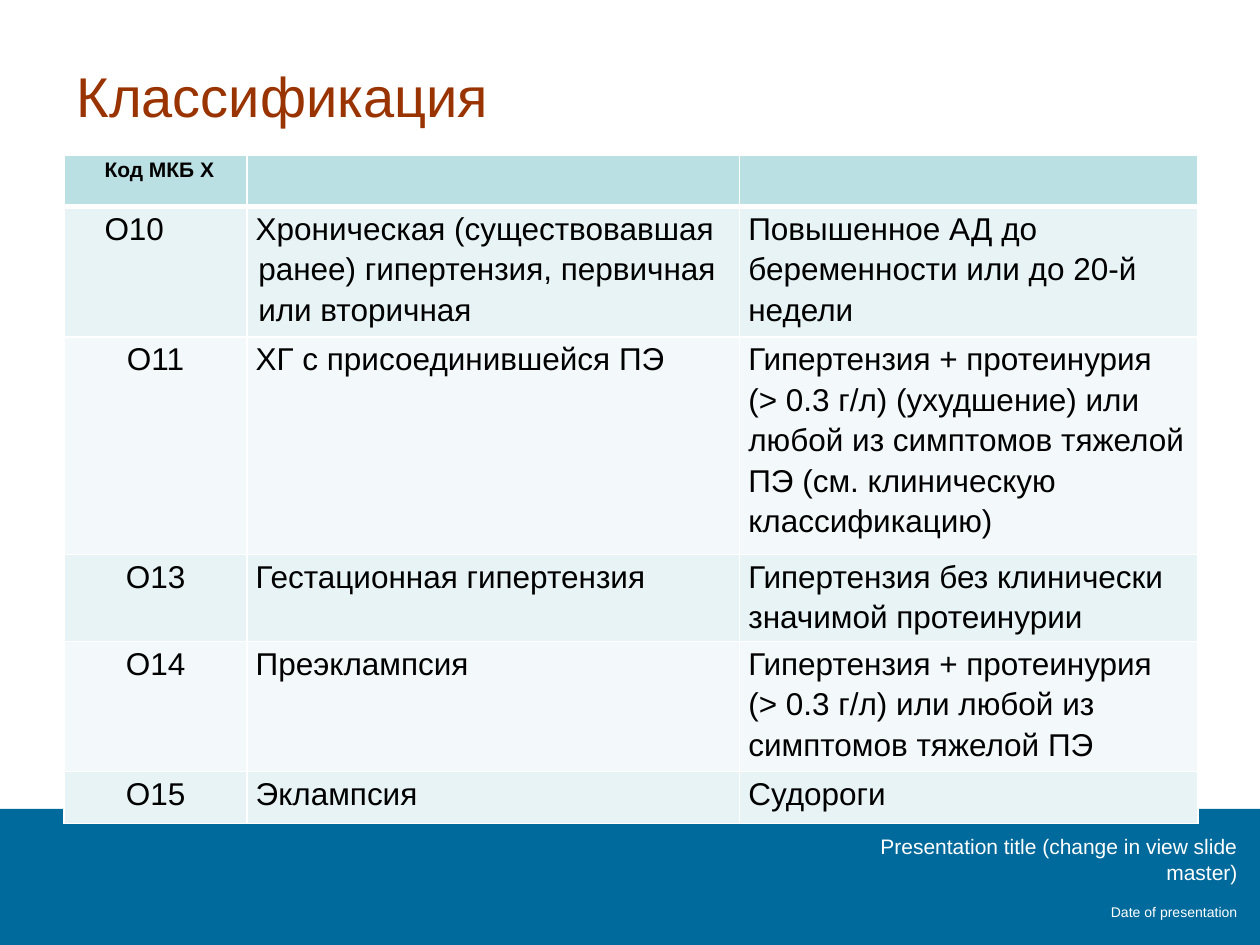
import pptx
import pptx.util
import pptx.dml.color
import pptx.enum.shapes
import pptx.enum.text
import pptx.oxml.ns
import lxml.etree

Inches = pptx.util.Inches
Pt = pptx.util.Pt
RGBColor = pptx.dml.color.RGBColor
Align = pptx.enum.text.PP_ALIGN

WHITE = RGBColor(0xFF, 0xFF, 0xFF)
BLACK = RGBColor(0x00, 0x00, 0x00)
RUST = RGBColor(0x99, 0x33, 0x00)
BLUE = RGBColor(0x00, 0x6A, 0x9C)
HEADER_FILL = RGBColor(0xBB, 0xE0, 0xE3)
BAND_FILLS = (RGBColor(0xE7, 0xF3, 0xF4), RGBColor(0xF3, 0xF9, 0xFA))

COLUMN_WIDTHS = (1.45, 3.91, 3.64)
ROW_HEIGHT = 0.41
ROWS = (
    ("Код МКБ Х", "", ""),
    ("O10", "Хроническая (существовавшая ранее) гипертензия, первичная или вторичная",
     "Повышенное АД до беременности или до 20-й недели"),
    ("O11", "ХГ с присоединившейся ПЭ",
     "Гипертензия + протеинурия (> 0.3 г/л) (ухудшение) или любой из симптомов "
     "тяжелой ПЭ (см. клиническую классификацию)"),
    ("O13", "Гестационная гипертензия", "Гипертензия без клинически значимой протеинурии"),
    ("O14", "Преэклампсия",
     "Гипертензия + протеинурия (> 0.3 г/л) или любой из симптомов тяжелой ПЭ"),
    ("O15", "Эклампсия", "Судороги"),
)
# Left margin and first-line indent of single cells, by row and column
INDENTS = {(0, 0): (0.25, 0), (1, 0): (0.25, 0), (1, 1): (0.02, -0.02)}


def add_span(para, text, size, color, bold=False):
    span = para.add_run()
    span.text = text
    span.font.name = "Arial"
    span.font.size = Pt(size)
    span.font.bold = bold
    span.font.color.rgb = color


def add_text_frame(page, left, top, width, height):
    box = page.shapes.add_textbox(Inches(left), Inches(top), Inches(width), Inches(height))
    box.text_frame.word_wrap = True
    return box.text_frame


def set_borders(cell, widths):
    """Draw white cell borders; widths maps each side to points."""
    properties = cell._tc.get_or_add_tcPr()
    for position, (side, width) in enumerate(widths.items()):
        line = lxml.etree.Element(pptx.oxml.ns.qn("a:ln" + side), w=str(Pt(width)))
        fill = lxml.etree.SubElement(line, pptx.oxml.ns.qn("a:solidFill"))
        lxml.etree.SubElement(fill, pptx.oxml.ns.qn("a:srgbClr"), val=str(WHITE))
        properties.insert(position, line)


def add_title(page, left, top, width, height):
    frame = add_text_frame(page, left, top, width, height)
    frame.vertical_anchor = pptx.enum.text.MSO_ANCHOR.MIDDLE
    add_span(frame.paragraphs[0], "Классификация", 32, RUST)


def add_footer(page, left, top, width, height):
    # Blue band
    band = page.shapes.add_shape(pptx.enum.shapes.MSO_SHAPE.RECTANGLE, Inches(left),
                                 Inches(top), Inches(width), Inches(height))
    band.shadow.inherit = False
    band.fill.solid()
    band.fill.fore_color.rgb = BLUE
    band.line.fill.background()

    # Presentation title and date, set against the right edge
    text_width = 3.25
    frame = add_text_frame(page, left + width - text_width - 0.08, top + 0.15, text_width, 0.8)
    heading = frame.paragraphs[0]
    add_span(heading, "Presentation title (change in view slide master)", 12, WHITE)
    date = frame.add_paragraph()
    date.space_before = Pt(11)
    add_span(date, "Date of presentation", 8, WHITE)
    for para in frame.paragraphs:
        para.alignment = Align.RIGHT


def fill_cell(cell, row, column, text):
    is_header = row == 0
    cell.margin_left = cell.margin_right = Inches(0.07)
    cell.margin_top = cell.margin_bottom = 0
    cell.fill.solid()
    cell.fill.fore_color.rgb = HEADER_FILL if is_header else BAND_FILLS[(row - 1) % 2]
    set_borders(cell, {"L": 1, "R": 1, "T": 3 if row == 1 else 1, "B": 3 if is_header else 1})
    if not text:
        return

    para = cell.text_frame.paragraphs[0]
    para.line_spacing = 1.15
    if (row, column) in INDENTS:
        margin, indent = INDENTS[row, column]
        properties = para._p.get_or_add_pPr()
        properties.set("marL", str(Inches(margin)))
        properties.set("indent", str(Inches(indent)))
    elif column == 0:
        para.alignment = Align.CENTER
    add_span(para, text, 12 if is_header else 18, BLACK, is_header)


def add_classification_table(page, left, top, width):
    # Rows start at one height and grow only as far as their text needs
    height = ROW_HEIGHT * len(ROWS)
    table = page.shapes.add_table(len(ROWS), len(COLUMN_WIDTHS), Inches(left), Inches(top),
                                  Inches(width), Inches(height)).table
    for column, column_width in zip(table.columns, COLUMN_WIDTHS):
        column.width = Inches(column_width)
    for row, texts in enumerate(ROWS):
        for column, text in enumerate(texts):
            fill_cell(table.cell(row, column), row, column, text)


def main():
    deck = pptx.Presentation()
    deck.slide_width = Inches(10)
    deck.slide_height = Inches(7.5)
    page = deck.slides.add_slide(deck.slide_layouts[6])
    add_footer(page, 0, 6.42, 10, 1.08)
    add_title(page, 0.51, 0.13, 9, 1.25)
    add_classification_table(page, 0.51, 1.23, 9)
    deck.save("out.pptx")


if __name__ == "__main__":
    main()
